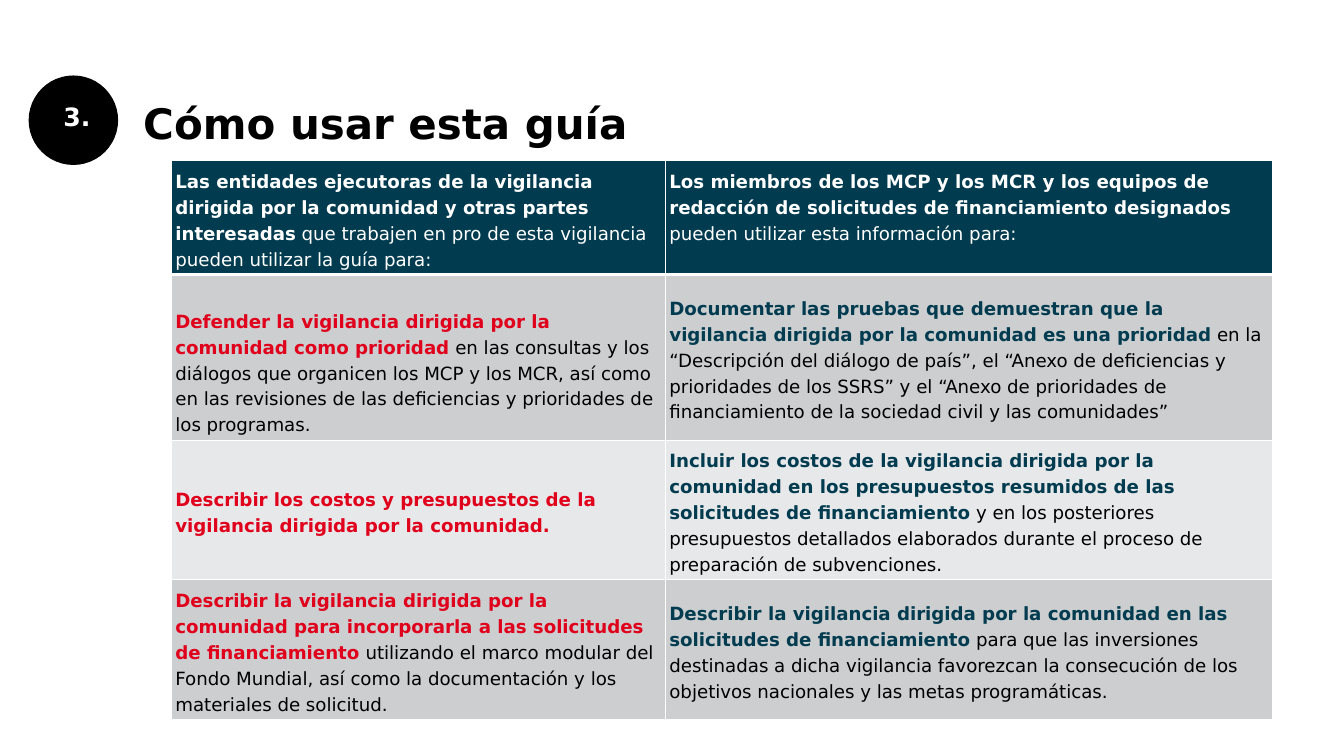
from lxml.etree import SubElement
from pptx import Presentation
from pptx.dml.color import RGBColor
from pptx.enum.shapes import MSO_SHAPE
from pptx.enum.text import MSO_ANCHOR, PP_ALIGN
from pptx.oxml.ns import qn
from pptx.util import Cm, Pt

COLORS = {
    "black": "000000",
    "white": "FFFFFF",
    "navy": "013B4F",
    "red": "E0001B",
    "gray": "CCCED0",
    "light": "E7E8E9",
}

# Each cell: bold lead, plain continuation
HEADER = [
    ("Las entidades ejecutoras de la vigilancia dirigida por la comunidad y otras partes interesadas",
     " que trabajen en pro de esta vigilancia pueden utilizar la guía para:"),
    ("Los miembros de los MCP y los MCR y los equipos de redacción de solicitudes de "
     "financiamiento designados ",
     "pueden utilizar esta información para:"),
]
USES = [
    [("Defender la vigilancia dirigida por la comunidad como prioridad ",
      "en las consultas y los diálogos que organicen los MCP y los MCR, así como en las "
      "revisiones de las deficiencias y prioridades de los programas."),
     ("Documentar las pruebas que demuestran que la vigilancia dirigida por la comunidad es "
      "una prioridad ",
      "en la “Descripción del diálogo de país”, el “Anexo de deficiencias y prioridades de los "
      "SSRS” y el “Anexo de prioridades de financiamiento de la sociedad civil y las comunidades”")],
    [("Describir los costos y presupuestos de la vigilancia dirigida por la comunidad.", ""),
     ("Incluir los costos de la vigilancia dirigida por la comunidad en los presupuestos "
      "resumidos de las solicitudes de financiamiento ",
      "y en los posteriores presupuestos detallados elaborados durante el proceso de "
      "preparación de subvenciones.")],
    [("Describir la vigilancia dirigida por la comunidad para incorporarla a las solicitudes "
      "de financiamiento ",
      "utilizando el marco modular del Fondo Mundial, así como la documentación y los "
      "materiales de solicitud."),
     ("Describir la vigilancia dirigida por la comunidad en las solicitudes de financiamiento ",
      "para que las inversiones destinadas a dicha vigilancia favorezcan la consecución de los "
      "objetivos nacionales y las metas programáticas.")],
]
COLUMN_WIDTHS = [12.45, 15.29]
ROW_HEIGHTS = [2.87, 4.17, 3.52, 3.52]


class GuidePage:
    font = "DejaVu Sans"

    def __init__(self, deck):
        self.page = deck.slides.add_slide(deck.slide_layouts[5])

    def color(self, name):
        return RGBColor.from_string(COLORS[name])

    def span(self, para, text, size, color, bold):
        span = para.add_run()
        span.text = text
        span.font.name = self.font
        span.font.size = Pt(size)
        span.font.bold = bold
        span.font.color.rgb = self.color(color)

    def title(self, text, left, top, width, height):
        box = self.page.shapes.title
        box.left, box.top, box.width, box.height = Cm(left), Cm(top), Cm(width), Cm(height)
        frame = box.text_frame
        frame.margin_left = frame.margin_right = frame.margin_top = frame.margin_bottom = 0
        frame.vertical_anchor = MSO_ANCHOR.TOP
        para = frame.paragraphs[0]
        para.alignment = PP_ALIGN.LEFT
        para.line_spacing = 1.5
        self.span(para, text, 30, "black", True)

    def disc(self, left, top, size):
        disc = self.page.shapes.add_shape(
            MSO_SHAPE.OVAL, Cm(left), Cm(top), Cm(size), Cm(size))
        disc.shadow.inherit = False
        disc.fill.solid()
        disc.fill.fore_color.rgb = self.color("black")
        disc.line.color.rgb = self.color("black")
        disc.line.width = Pt(1)

    def label(self, text, left, top, width, height):
        box = self.page.shapes.add_textbox(Cm(left), Cm(top), Cm(width), Cm(height))
        box.text_frame.word_wrap = True
        self.span(box.text_frame.paragraphs[0], text, 18, "white", True)

    def borders(self, cell, bottom):
        properties = cell._tc.get_or_add_tcPr()
        for side, points in (("L", 1), ("R", 1), ("T", 1), ("B", bottom)):
            line = SubElement(properties, qn(f"a:ln{side}"), w=str(Pt(points)))
            fill = SubElement(line, qn("a:solidFill"))
            SubElement(fill, qn("a:srgbClr"), val=COLORS["white"])

    def cell(self, cell, words, fill, lead_color, rest_color, bottom=1):
        self.borders(cell, bottom)
        cell.fill.solid()
        cell.fill.fore_color.rgb = self.color(fill)
        cell.margin_left = cell.margin_bottom = Cm(0.1)
        cell.margin_right = cell.margin_top = Cm(0.15)
        cell.vertical_anchor = MSO_ANCHOR.MIDDLE
        para = cell.text_frame.paragraphs[0]
        para.line_spacing = Pt(18.5)
        lead, rest = words
        self.span(para, lead, 13, lead_color, True)
        if rest:
            self.span(para, rest, 13, rest_color, False)

    def table(self, left, top):
        table = self.page.shapes.add_table(
            len(ROW_HEIGHTS), len(COLUMN_WIDTHS), Cm(left), Cm(top),
            Cm(sum(COLUMN_WIDTHS)), Cm(sum(ROW_HEIGHTS))).table
        table.horz_banding = False
        for column, width in zip(table.columns, COLUMN_WIDTHS):
            column.width = Cm(width)
        for row, height in zip(table.rows, ROW_HEIGHTS):
            row.height = Cm(height)

        # Header row
        for column, words in enumerate(HEADER):
            self.cell(table.cell(0, column), words, "navy", "white", "white", bottom=3)
        table.cell(0, 1).vertical_anchor = MSO_ANCHOR.TOP

        # Uses, with alternating fills and one lead colour per column
        for row, uses in enumerate(USES, start=1):
            fill = "gray" if row % 2 else "light"
            for column, (words, lead) in enumerate(zip(uses, ("red", "navy"))):
                self.cell(table.cell(row, column), words, fill, lead, "black")
        # The first use sits one line lower
        table.cell(1, 0).margin_top = Cm(0.8)


def main():
    deck = Presentation()
    deck.slide_width, deck.slide_height = Cm(33.87), Cm(19.05)
    guide = GuidePage(deck)

    # Section number and title
    guide.disc(0.74, 1.92, 2.22)
    guide.label("3.", 1.35, 2.44, 1.52, 1.02)
    guide.title("Cómo usar esta guía", 3.61, 1.83, 26.67, 2.21)

    # Uses by audience
    guide.table(4.32, 4.05)
    deck.save("out.pptx")


if __name__ == "__main__":
    main()
